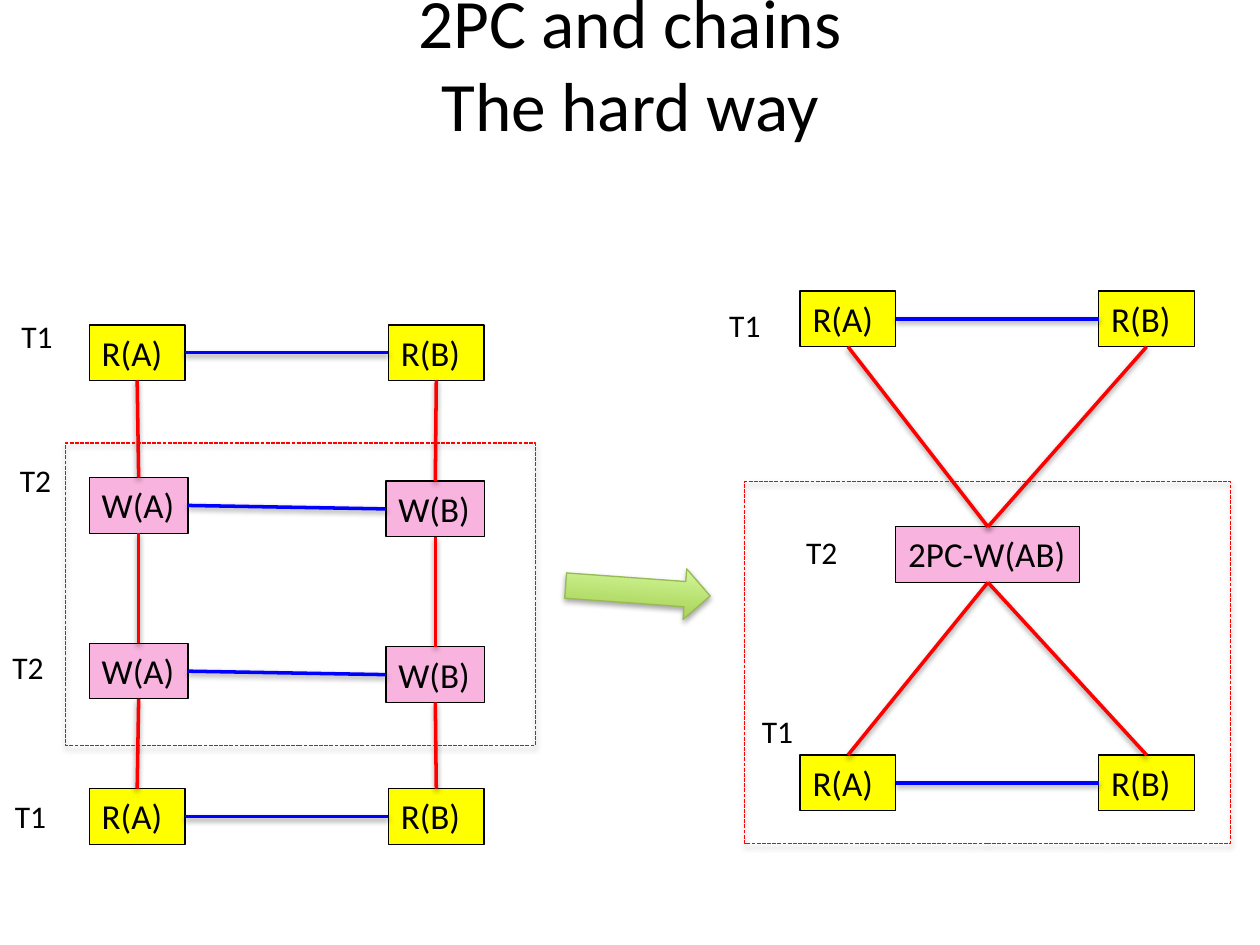
from lxml import etree
from pptx import Presentation
from pptx.dml.color import RGBColor
from pptx.enum.dml import MSO_LINE_DASH_STYLE as Dash
from pptx.enum.shapes import MSO_CONNECTOR as Connector, MSO_SHAPE as Shape
from pptx.enum.text import MSO_ANCHOR as Anchor, MSO_AUTO_SIZE as AutoSize, PP_ALIGN as Align
from pptx.oxml.ns import qn
from pptx.util import Cm, Pt

COLORS = {
    "text": "000000", "read": "FFFF00", "write": "F8B3DE",
    "same": "0000FF", "conflict": "FF0000",
    "arrow_dark": "A0CA4A", "arrow_light": "DAFFA5", "arrow_line": "98B955",
}
TOP, LEFT, BOTTOM, RIGHT = range(4)  # connection sites of a rectangle
READ_SIZE = (1.93, 1.12)
WRITE_SIZE = (1.99, 1.12)
LABEL_SIZE = (1.14, 1.02)


def rgb(name):
    return RGBColor.from_string(COLORS[name])


def set_line(shape, color, width):
    shape.line.color.rgb = rgb(color)
    shape.line.width = Pt(width)


def add_shadow(shape, alpha, distance):
    """Append a soft downward shadow; call it after the line is set."""
    effects = etree.SubElement(shape.element.spPr, qn("a:effectLst"))
    shadow = etree.SubElement(effects, qn("a:outerShdw"), blurRad="40000",
                              dist=str(distance), dir="5400000", rotWithShape="0")
    color = etree.SubElement(shadow, qn("a:srgbClr"), val=COLORS["text"])
    etree.SubElement(color, qn("a:alpha"), val=str(alpha * 1000))


def add_text(slide, text, box, size, **frame_format):
    shape = slide.shapes.add_textbox(*map(Cm, box))
    frame = shape.text_frame
    for name, value in frame_format.items():
        setattr(frame, name, value)
    paragraph = frame.paragraphs[0]
    paragraph.text = text
    font_format = {"name": "Calibri", "size": Pt(size)}
    for run in paragraph.runs:
        for name, value in font_format.items():
            setattr(run.font, name, value)
        run.font.color.rgb = rgb("text")
    return shape


def add_title(slide, box):
    shape = add_text(slide, "2PC and chains\vThe hard way", box, 39.6,
                     word_wrap=True, vertical_anchor=Anchor.MIDDLE)
    shape.text_frame.paragraphs[0].alignment = Align.CENTER


def add_node(slide, text, x, y, kind="read", size=READ_SIZE):
    node = add_text(slide, text, (x, y, *size), 20, word_wrap=kind == "read",
                    auto_size=AutoSize.SHAPE_TO_FIT_TEXT)
    node.fill.solid()
    node.fill.fore_color.rgb = rgb(kind)
    set_line(node, "text", 0.75)
    return node


def connect(slide, start, start_site, end, end_site, color):
    connector = slide.shapes.add_connector(Connector.STRAIGHT, 0, 0, 0, 0)
    connector.begin_connect(start, start_site)
    connector.end_connect(end, end_site)
    set_line(connector, color, 2)
    add_shadow(connector, 38, 20000)


def add_frame(slide, *box):
    frame = slide.shapes.add_shape(Shape.RECTANGLE, *map(Cm, box))
    frame.fill.background()
    set_line(frame, "conflict", 0.75)
    frame.line.dash_style = Dash.SQUARE_DOT
    add_shadow(frame, 35, 23000)


def add_labels(slide, x, y, labels):
    for text, dx, dy in labels:
        add_text(slide, text, (x + dx, y + dy, *LABEL_SIZE), 18, word_wrap=False,
                 auto_size=AutoSize.SHAPE_TO_FIT_TEXT)


def add_read_pair(slide, x, y, step):
    pair = [add_node(slide, f"R({item})", x + i * step, y)
            for i, item in enumerate("AB")]
    connect(slide, pair[1], LEFT, pair[0], RIGHT, "same")
    return pair


def add_write_pair(slide, x, y, step):
    pair = [add_node(slide, f"W({item})", x + i * step, y + i * 0.07, "write", WRITE_SIZE)
            for i, item in enumerate("AB")]
    connect(slide, pair[1], LEFT, pair[0], RIGHT, "same")
    return pair


def add_separate_writes(slide, x, y):
    rows = [
        add_read_pair(slide, x + 1.8, y + 0.28, 6.03),
        add_write_pair(slide, x + 1.8, y + 3.36, 5.98),
        add_write_pair(slide, x + 1.8, y + 6.7, 5.98),
        add_read_pair(slide, x + 1.8, y + 9.63, 6.03),
    ]
    for upper, lower in zip(rows, rows[1:]):
        for start, end in zip(upper, lower):
            connect(slide, start, BOTTOM, end, TOP, "conflict")
    add_frame(slide, x + 1.32, y + 2.66, 9.47, 6.1)
    add_labels(slide, x, y, [("T1", 0.18, 0), ("T2", 0.15, 2.9),
                             ("T2", 0, 6.66), ("T1", 0.05, 9.68)])


def add_combined_write(slide, x, y):
    write = add_node(slide, "2PC-W(AB)", x + 3.61, y + 4.75, "write", (3.71, 1.12))
    for node in add_read_pair(slide, x + 1.68, y, 6.02):
        connect(slide, node, BOTTOM, write, TOP, "conflict")
    for node in add_read_pair(slide, x + 1.68, y + 9.35, 6.02):
        connect(slide, write, BOTTOM, node, TOP, "conflict")
    add_frame(slide, x + 0.56, y + 3.84, 9.8, 7.29)
    add_labels(slide, x, y, [("T1", 0, 0.18), ("T2", 1.55, 4.75), ("T1", 0.66, 8.36)])


def add_transition_arrow(slide, box):
    arrow = slide.shapes.add_shape(Shape.RIGHT_ARROW, *map(Cm, box))
    arrow.rotation = 4.1
    arrow.fill.gradient()
    arrow.fill.gradient_angle = 90
    for stop, color in zip(arrow.fill.gradient_stops, ("arrow_dark", "arrow_light")):
        stop.color.rgb = rgb(color)
    set_line(arrow, "arrow_line", 0.75)
    add_shadow(arrow, 35, 23000)


def main():
    presentation = Presentation()
    presentation.slide_width, presentation.slide_height = Cm(25.4), Cm(19.05)
    slide = presentation.slides.add_slide(presentation.slide_layouts[6])
    add_title(slide, (1.27, 0.05, 22.86, 2.41))
    add_separate_writes(slide, 0, 6.27)
    add_transition_arrow(slide, (11.4, 11.4, 2.92, 1.02))
    add_combined_write(slide, 14.45, 5.87)
    presentation.save("out.pptx")


if __name__ == "__main__":
    main()
